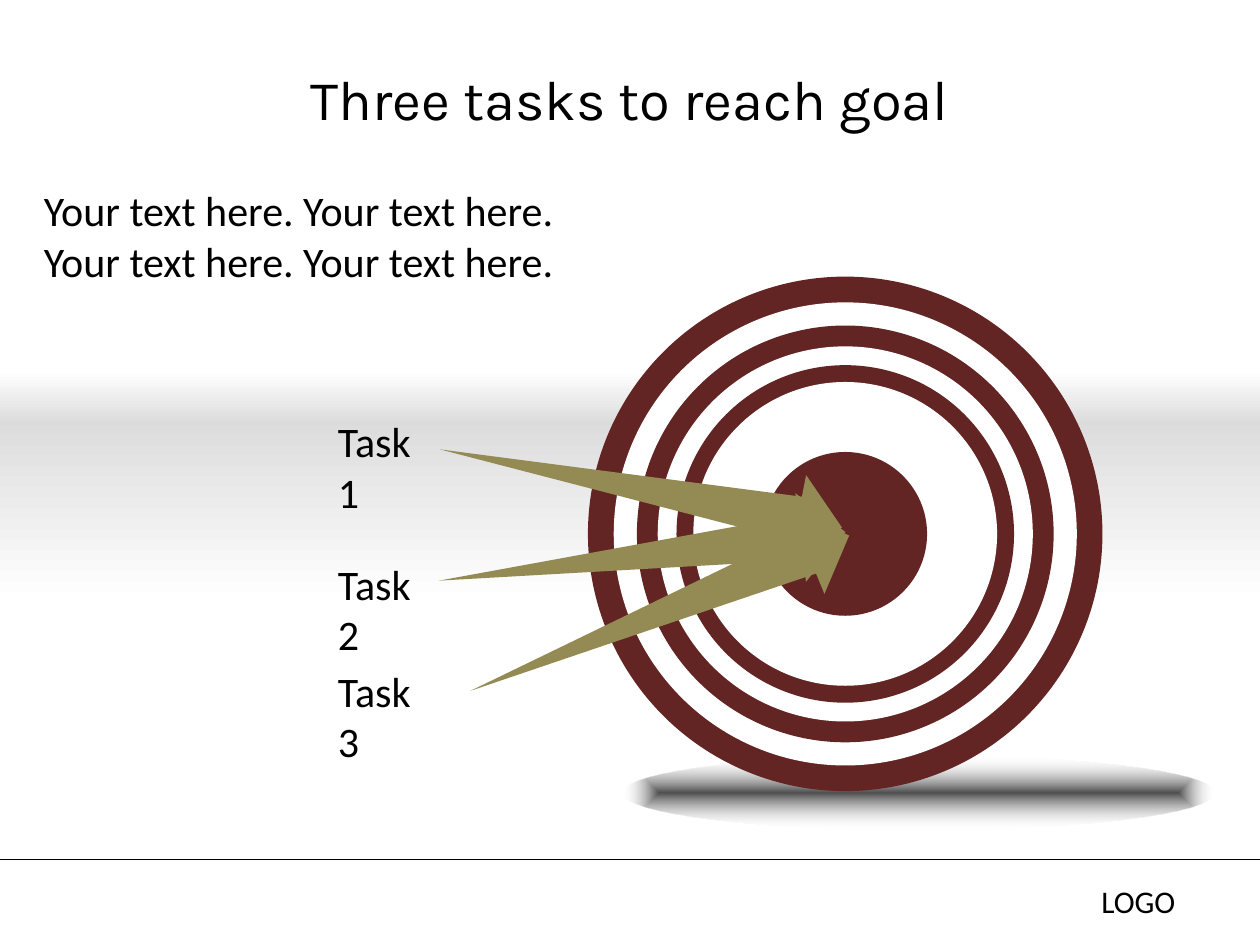
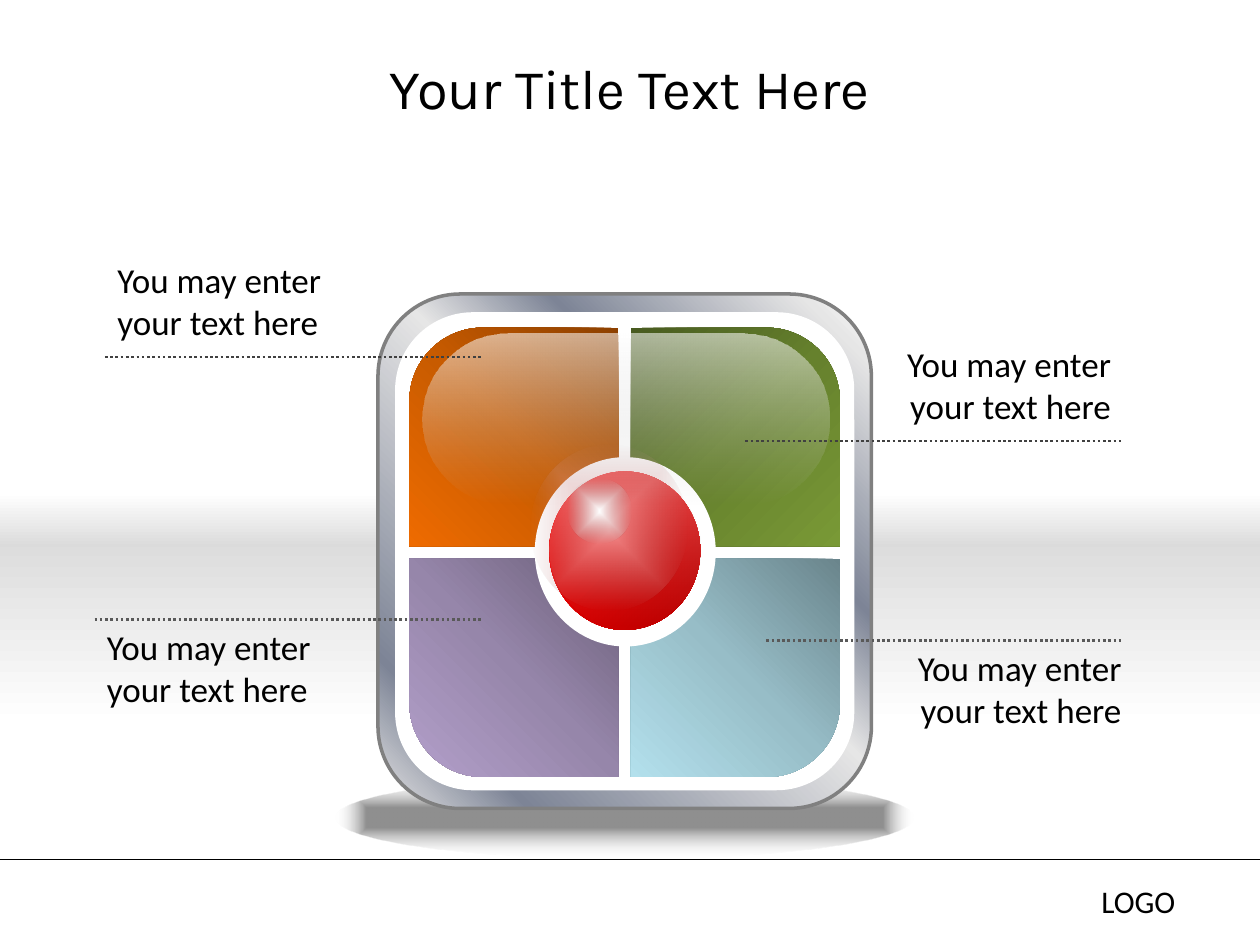
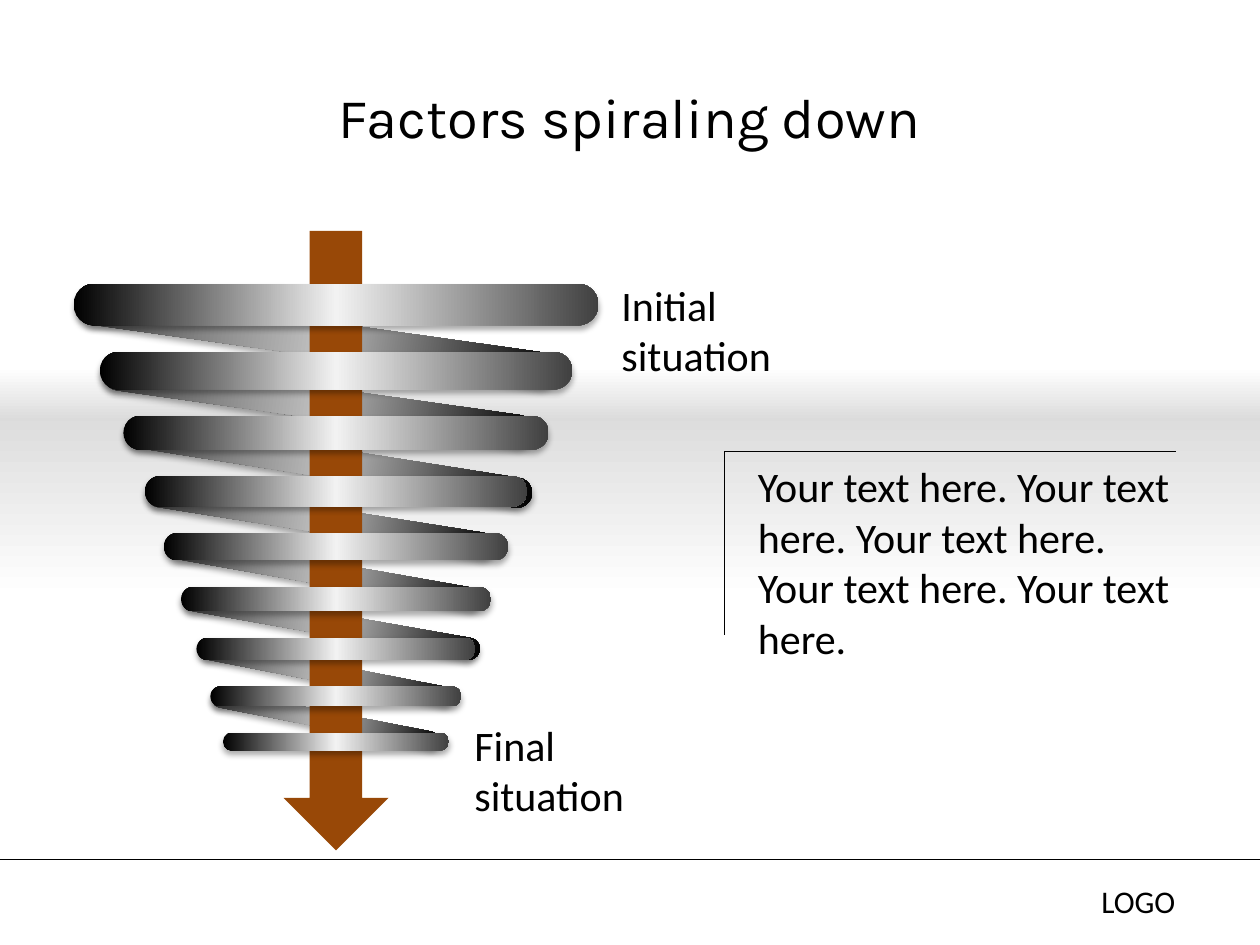
import math

import pptx
import pptx.dml.color
import pptx.enum.dml
import pptx.enum.shapes
import pptx.enum.text
import pptx.oxml
import pptx.oxml.ns
import pptx.util

SHAPE = pptx.enum.shapes.MSO_SHAPE
ALIGN = pptx.enum.text.PP_ALIGN
ANCHOR = pptx.enum.text.MSO_ANCHOR

COLORS = {
    "ink": "000000", "paper": "FFFFFF", "band": "DDDDDD", "band_top": "DBDBDB",
    "ring": "632523", "dart": "948A54", "fall": "984807", "frame_edge": "808080",
    "dots_dark": "404040", "dots_light": "595959",
}
# A gradient stop is (position, colour) or (position, colour, opacity), in percent.
COIL_FRONT = [(0, "000000"), (50, "F2F2F2"), (100, "404040")]
COIL_BACK = [(0, "404040"), (50, "BFBFBF"), (100, "000000")]
STEEL = [(0, "FFFFFF"), (7, "E6E6E6"), (32, "7D8496"),
         (47, "E6E6E6"), (85, "7D8496"), (100, "E6E6E6")]
HEADING, BODY = "Karla", "Calibri"
COLUMNS, ROWS = 120, 90  # square cells, twelve to the inch


class Stage:
    """Holds the deck's style and the slide being drawn; lengths are grid cells."""

    def __init__(self):
        self.deck = pptx.Presentation()
        self.deck.slide_width = pptx.util.Inches(10)
        self.deck.slide_height = pptx.util.Inches(7.5)
        self.cell = self.deck.slide_width / COLUMNS
        self.page = None

    def emu(self, *cells):
        return [round(value * self.cell) for value in cells]

    def rgb(self, name):
        return pptx.dml.color.RGBColor.from_string(COLORS[name])

    def start(self, title, title_height, band_top):
        """Open a slide with its grey band, title and footer."""
        self.page = self.deck.slides.add_slide(self.deck.slide_layouts[6])
        for top, height, name, angle in ((band_top + 5, 17, "band", 90),
                                         (band_top, 5.15, "band_top", 270)):
            stops = [(0, COLORS[name]), (100, COLORS["paper"])]
            self.shape(SHAPE.RECTANGLE, 0, top, COLUMNS, height, stops, angle)
        self.text(title, 6, 3.6, 108, title_height, 32, HEADING, ALIGN.CENTER, ANCHOR.MIDDLE)
        self.line((0, 81.85), (COLUMNS, 81.85))
        self.text("LOGO", 103.7, 83.4, 13.3, 4.8, 18)

    def text(self, words, left, top, width, height, size=24, font=BODY,
             align=ALIGN.LEFT, anchor=ANCHOR.TOP):
        box = self.page.shapes.add_textbox(*self.emu(left, top, width, height))
        frame = box.text_frame
        frame.word_wrap = True
        frame.vertical_anchor = anchor
        frame.text = words
        para = frame.paragraphs[0]
        para.alignment = align
        span = para.runs[0]
        span.font.name = font
        span.font.size = pptx.util.Pt(size)
        span.font.color.rgb = self.rgb("ink")

    def paint(self, shape, fill, angle=None):
        """Fill with a named colour, or with stops: along an angle, else from the centre."""
        shape.shadow.inherit = False
        shape.line.fill.background()
        if isinstance(fill, str):
            shape.fill.solid()
            shape.fill.fore_color.rgb = self.rgb(fill)
            return
        stops = ""
        for position, color, *opacity in fill:
            alpha = f'<a:alpha val="{opacity[0] * 1000}"/>' if opacity else ""
            stops += (f'<a:gs pos="{position * 1000}"><a:srgbClr val="{color}">'
                      f'{alpha}</a:srgbClr></a:gs>')
        if angle is None:
            course = ('<a:path path="shape"><a:fillToRect l="50000" t="50000" '
                      'r="50000" b="50000"/></a:path>')
        else:
            course = f'<a:lin ang="{angle * 60000}" scaled="0"/>'
        shape.fill.background()
        blank = shape._element.spPr.find(pptx.oxml.ns.qn("a:noFill"))
        blank.getparent().replace(blank, pptx.oxml.parse_xml(
            f'<a:gradFill {pptx.oxml.ns.nsdecls("a")} rotWithShape="1">'
            f'<a:gsLst>{stops}</a:gsLst>{course}</a:gradFill>'))

    def shape(self, kind, left, top, width, height, fill, angle=None,
              corner=None, flip="", edge=None):
        shape = self.page.shapes.add_shape(kind, *self.emu(left, top, width, height))
        self.paint(shape, fill, angle)
        if corner is not None:
            shape.adjustments[0] = corner
        for axis in flip:
            shape._element.spPr.xfrm.set("flip" + axis, "1")
        if edge:
            shape.line.color.rgb = self.rgb(edge)
            shape.line.width = pptx.util.Pt(2)
        return shape

    def disc(self, x, y, size, fill):
        self.shape(SHAPE.OVAL, x - size / 2, y - size / 2, size, size, fill)

    def line(self, start, end, color="ink", width=0.75, dotted=False):
        line = self.page.shapes.add_connector(
            pptx.enum.shapes.MSO_CONNECTOR.STRAIGHT, *self.emu(*start, *end))
        line.line.color.rgb = self.rgb(color)
        line.line.width = pptx.util.Pt(width)
        if dotted:
            line.line.dash_style = pptx.enum.dml.MSO_LINE.ROUND_DOT
        line._element.spPr.append(pptx.oxml.parse_xml(
            f'<a:effectLst {pptx.oxml.ns.nsdecls("a")}/>'))

    def dart(self, x, y, degrees):
        """Draw an arrow that widens from its tail point towards the head."""
        across, down = math.cos(math.radians(degrees)), math.sin(math.radians(degrees))
        outline = [(0, 0), (34.7, -2.15), (34.7, -4.25), (39, 0), (34.7, 4.25), (34.7, 2.15)]
        points = [self.emu(x + along * across - side * down, y + along * down + side * across)
                  for along, side in outline]
        builder = self.page.shapes.build_freeform(*points[0], scale=1.0)
        builder.add_line_segments(points[1:], close=True)
        self.paint(builder.convert_to_shape(), "dart")

    def coil(self, x, y, width, height, stops, tilt=0):
        """Draw one rounded bar of the spiral about its centre."""
        bar = self.shape(SHAPE.ROUNDED_RECTANGLE, x - width / 2, y - height / 2,
                         width, height, stops, 0, corner=0.5)
        bar.rotation = tilt
        effects = bar._element.spPr.find(pptx.oxml.ns.qn("a:effectLst"))
        blur, distance = pptx.util.Pt(3.5), pptx.util.Pt(2.2)
        effects.append(pptx.oxml.parse_xml(
            f'<a:outerShdw {pptx.oxml.ns.nsdecls("a")} blurRad="{blur}" dist="{distance}" '
            'dir="5400000" rotWithShape="0"><a:srgbClr val="000000">'
            '<a:alpha val="32000"/></a:srgbClr></a:outerShdw>'))


def target_slide(stage):
    stage.start("Three tasks to reach goal", 11.4, 35.35)
    stage.shape(SHAPE.OVAL, 59.3, 72, 56.4, 7, [(0, "171717", 76), (100, "FFFFFF", 0)])
    # Rings, each nine tenths of the one around it
    center = (80.5, 50.85)
    for ring in range(6):
        stage.disc(*center, 49 * 0.9 ** ring, "paper" if ring % 2 else "ring")
    stage.disc(*center, 15.6, "ring")
    # Darts and their labels
    darts = [(41.9, 42.8, 11, 39), (41.8, 55.3, -6.8, 52.6), (44.8, 65.8, -22.3, 62.8)]
    for number, (x, y, degrees, label_top) in enumerate(darts, 1):
        stage.dart(x, y, degrees)
        stage.text(f"Task {number}", 31, label_top, 10.8, 6)
    stage.text(" ".join(["Your text here."] * 4), 3, 17, 56, 11)


def quadrant_slide(stage):
    stage.start("Your Title Text Here", 9.4, 47)
    stage.shape(SHAPE.OVAL, 32, 74, 55, 7.8, [(24, "000000", 44), (100, "FFFFFF", 0)])
    # Frame
    stage.shape(SHAPE.ROUNDED_RECTANGLE, 36, 28, 47, 49, STEEL, 135, edge="frame_edge")
    stage.shape(SHAPE.ROUNDED_RECTANGLE, 37.8, 29.9, 43.4, 45.2, "paper", edge="paper")
    # Quadrants: column, row, colours from dark to light, angle
    quadrants = [(1, 0, ("485B20", "66812D", "799936"), 45),
                 (1, 1, ("6A858C", "97BDC7", "B3E0EC"), 225),
                 (0, 0, ("8D4000", "C85B00", "EE6B00"), 45),
                 (0, 1, ("6A5E78", "9686AA", "B39FCA"), 315)]
    for column, row, shades, angle in quadrants:
        stage.shape(SHAPE.ROUND_1_RECTANGLE, 39 + 21.1 * column, 31.2 + 22 * row, 19.9, 20.8,
                    list(zip((0, 50, 100), shades)), angle, corner=0.351,
                    flip=("" if column else "H") + ("V" if row else ""))
    # Ball and its highlights
    stage.shape(SHAPE.OVAL, 51.1, 43.7, 16.9, 17.7, "paper", edge="paper")
    stage.shape(SHAPE.OVAL, 52.3, 44.9, 14.4, 15.1, [(0, "FF0000"), (100, "B60000")], 45)
    stage.shape(SHAPE.OVAL, 52.3, 44.8, 14.4, 15, [(0, "FFFFFF", 30), (100, "B6B6B6", 0)], 90)
    stage.shape(SHAPE.OVAL, 50.5, 42.4, 15, 15.7, [(0, "FFB3B3", 70), (100, "B68080", 0)])
    stage.shape(SHAPE.OVAL, 54.1, 45.6, 6, 6.2, [(0, "FFFFFF"), (100, "B6B6B6", 0)])
    stage.shape(SHAPE.ROUNDED_RECTANGLE, 40.2, 31.8, 38.8, 16.3,
                [(0, "FFFFFF", 56), (100, "B6B6B6", 0)], 90, corner=0.5)
    # Callouts: text left, top, width, alignment, then the line's ends, row and colour
    callouts = [(9, 59, 24, ALIGN.LEFT, 9, 46, 59, "dots_light"),
                (10, 24, 24, ALIGN.LEFT, 10, 46, 34, "dots_dark"),
                (84, 32, 23, ALIGN.RIGHT, 71, 107, 42, "dots_dark"),
                (85, 61, 23, ALIGN.RIGHT, 73, 107, 61, "dots_light")]
    for left, top, width, align, start, end, row, color in callouts:
        stage.text("You may enter your text here", left, top, width, 9.2, 20, align=align)
        stage.line((start, row), (end, row), color, 1.5, dotted=True)


def spiral_slide(stage):
    stage.start("Factors spiraling down", 15, 35)
    # Front coils shrink by a tenth; back coils sit in the gaps between them
    gap, top, front = 2.5, 27, []
    for step in range(9):
        height = 4 * 0.9 ** step
        front.append((top, 50 * 0.9 ** step, height))
        top += height + gap
    back = [(30.3, 46), (30.3, 41.4), (31.3, 39.2), (30.5, 33.5),
            (31, 30.1), (31.6, 28.6), (31.1, 24.5), (31, 22)]
    for step, (x, width) in enumerate(back):
        middle = front[step + 1][0] - gap / 2
        stage.coil(x, middle, width, width * 0.073, COIL_BACK, 8 + step // 2)
    stage.shape(SHAPE.DOWN_ARROW, 27, 22, 10, 59, "fall")
    for top, width, height in reversed(front):
        stage.coil(32, top + height / 2, width, height, COIL_FRONT)
    # Labels and the bracketed text
    stage.text("Initial situation", 58, 26, 22.9, 6)
    stage.text("Final situation", 44, 67.9, 21.7, 6)
    stage.text(" ".join(["Your text here."] * 5), 71, 43.3, 42.8, 15.7)
    for end in ((69, 60.5), (112, 43)):
        stage.line((69, 43), end)


def main():
    stage = Stage()
    target_slide(stage)
    quadrant_slide(stage)
    spiral_slide(stage)
    stage.deck.save("out.pptx")


if __name__ == "__main__":
    main()
